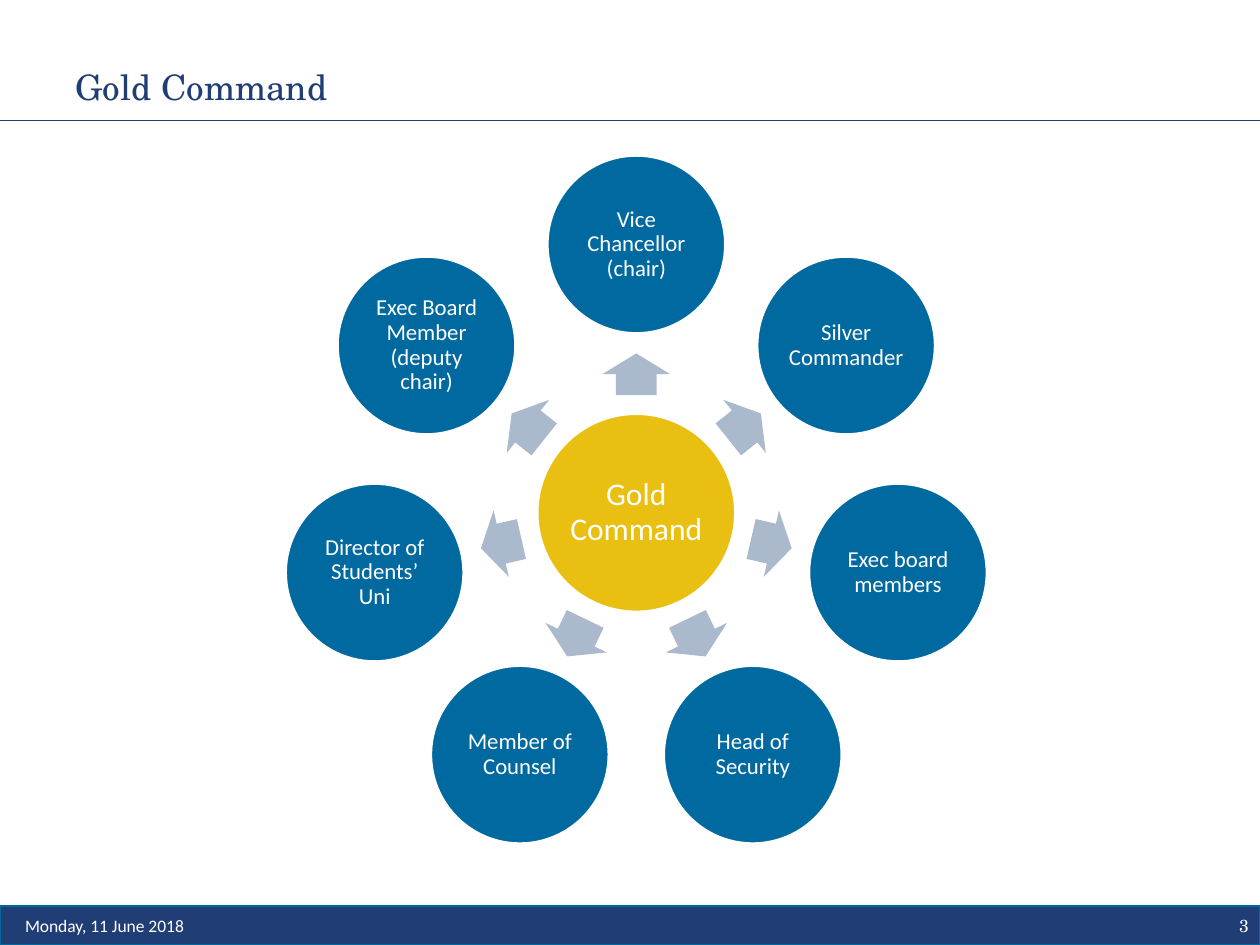
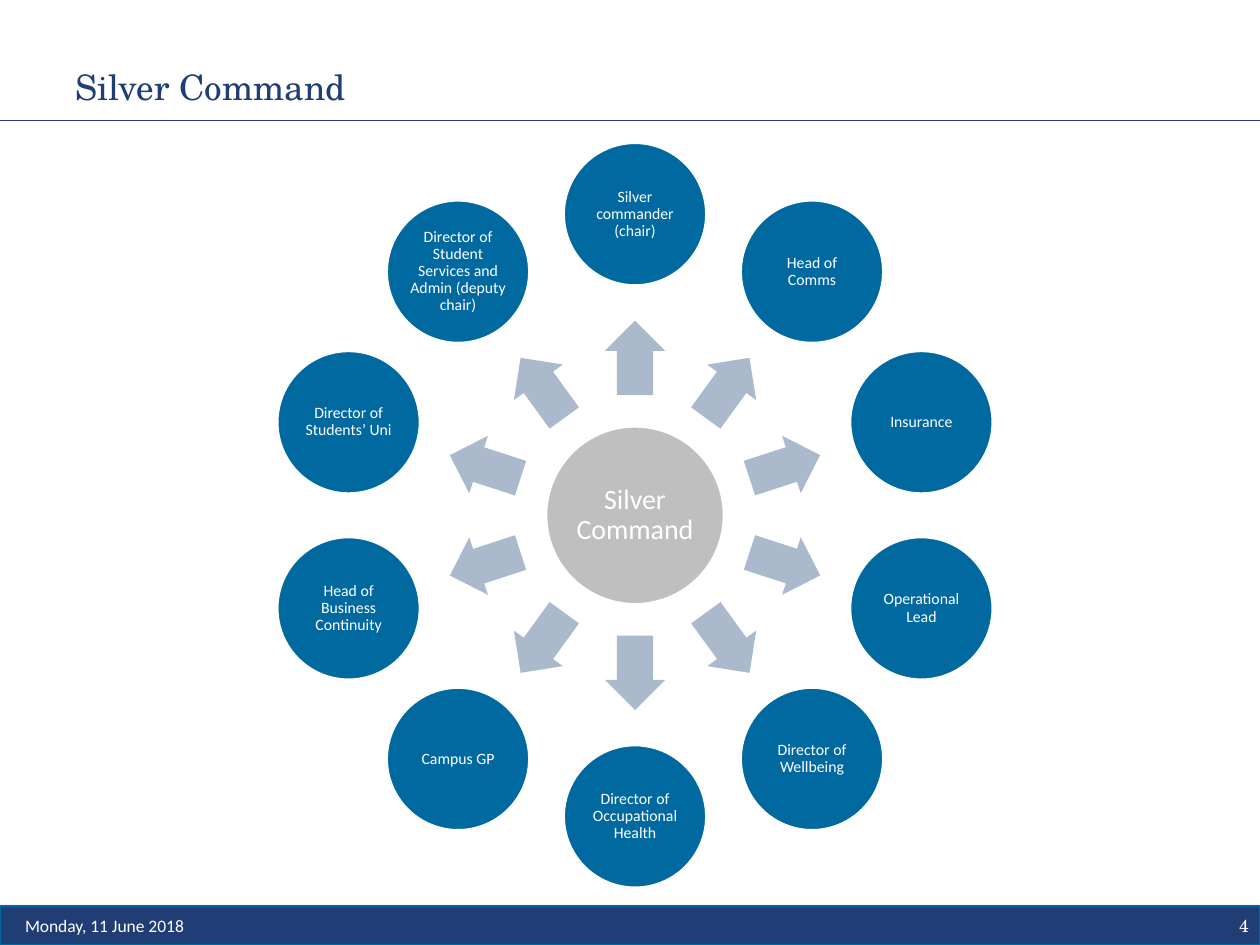
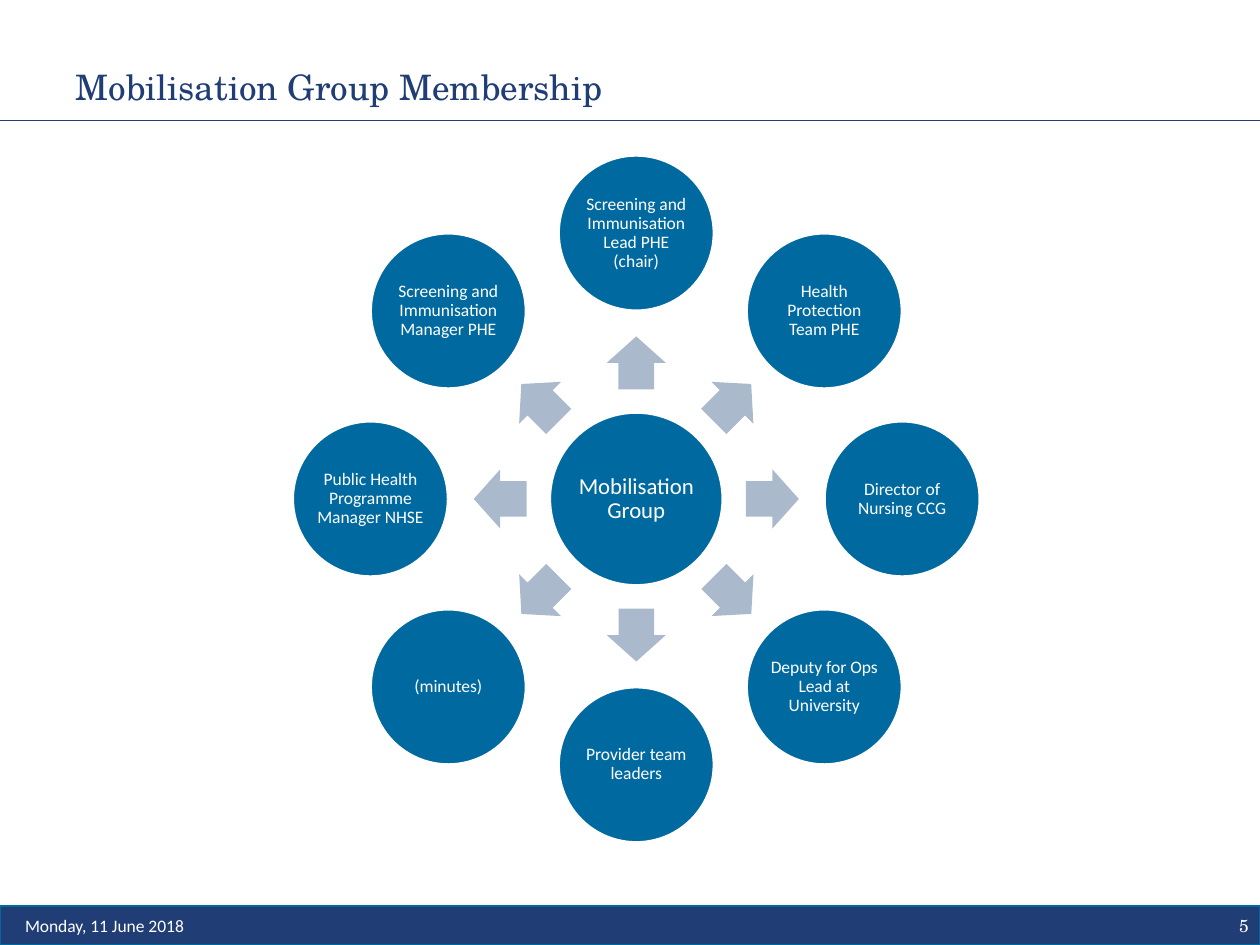
from dataclasses import dataclass
from math import cos, radians, sin

from lxml.etree import SubElement
from pptx import Presentation
from pptx.dml.color import RGBColor
from pptx.enum.shapes import MSO_CONNECTOR, MSO_SHAPE
from pptx.enum.text import MSO_ANCHOR, MSO_AUTO_SIZE, PP_ALIGN
from pptx.oxml.ns import qn
from pptx.util import Inches, Pt

COLORS = {
    "navy": "203D75",
    "band_edge": "00689C",
    "blue": "006AA0",
    "gold": "E9BF11",
    "silver": "BFBFBF",
    "arrow": "ABB9CD",
    "white": "FFFFFF",
    "black": "000000",
}
SERIF = "TeX Gyre Schola"
SANS = "Calibri"
DATE = "Monday, 11 June 2018"
FIRST_PAGE = 3
TITLE_BOX = (0.5, 0.46, 8.26, 0.45)
BAND_BOX = (0, 7.19, 10, 0.31)
RULE_TOP = 0.96


@dataclass
class Wheel:
    """Sizes and wording of a hub with members around it, in inches and points."""
    title: str
    box: tuple
    hub_text: str
    hub_color: str
    hub_size: float
    hub_font: int
    member_size: float
    member_font: int
    arrow_size: tuple
    arrow_radius: float
    members: list


WHEELS = [
    Wheel("Gold Command", (2.21, 1.23, 5.68), "Gold Command", "gold", 1.58, 18,
          1.42, 13, (0.33, 0.54), 1.1,
          ["Vice Chancellor (chair)", "Silver Commander", "Exec board members",
           "Head of Security", "Member of Counsel", "Director of Students’ Uni",
           "Exec Board Member (deputy chair)"]),
    Wheel("Silver Command", (2.08, 1.13, 5.92), "Silver Command", "silver", 1.42, 16,
          1.14, 9, (0.59, 0.48), 1.25,
          ["Silver commander (chair)", "Head of Comms", "Insurance",
           "Operational Lead", "Director of Wellbeing",
           "Director of Occupational Health", "Campus GP",
           "Head of Business Continuity", "Director of Students’ Uni",
           "Director of Student Services and Admin (deputy chair)"]),
    Wheel("Mobilisation Group Membership", (2.32, 1.23, 5.46), "Mobilisation Group",
          "blue", 1.38, 13, 1.24, 10, (0.42, 0.47), 1.08,
          ["Screening and Immunisation Lead PHE (chair)", "Health Protection Team PHE",
           "Director of Nursing CCG", "Deputy for Ops Lead at University",
           "Provider team leaders", "(minutes)", "Public Health Programme Manager NHSE",
           "Screening and Immunisation Manager PHE"]),
]


def color(name):
    """Return a palette colour."""
    return RGBColor.from_string(COLORS[name])


def place(shape, box):
    """Move and size a shape to a box in inches."""
    shape.left, shape.top, shape.width, shape.height = map(Inches, box)


def write(shape, text, font, size, color_name, alignment):
    """Put one formatted, vertically centred paragraph in a shape."""
    frame = shape.text_frame
    frame.text = text
    frame.word_wrap = True
    frame.auto_size = MSO_AUTO_SIZE.NONE
    frame.vertical_anchor = MSO_ANCHOR.MIDDLE
    paragraph = frame.paragraphs[0]
    paragraph.alignment = alignment
    paragraph.font.name = font
    paragraph.font.size = Pt(size)
    paragraph.font.color.rgb = color(color_name)
    return paragraph


def add_centered(shapes, kind, center, size, fill):
    """Add a flat filled shape around a centre point."""
    box = (center[0] - size[0] / 2, center[1] - size[1] / 2, *size)
    shape = shapes.add_shape(kind, *map(Inches, box))
    shape.shadow.inherit = False
    shape.fill.solid()
    shape.fill.fore_color.rgb = color(fill)
    return shape


def add_circle(shapes, center, diameter, fill, text, size):
    """Add a white-edged circle holding a centred label."""
    circle = add_centered(shapes, MSO_SHAPE.OVAL, center, (diameter, diameter), fill)
    circle.line.color.rgb = color("white")
    circle.line.width = Pt(2)
    write(circle, text, SANS, size, "white", PP_ALIGN.CENTER).line_spacing = 0.9
    frame = circle.text_frame
    frame.margin_left = frame.margin_right = Pt(size / 10)
    frame.margin_top = frame.margin_bottom = Pt(size / 10)


def add_arrow(shapes, center, size, rotation):
    """Add a block arrow that points away from the hub."""
    arrow = add_centered(shapes, MSO_SHAPE.RIGHT_ARROW, center, size, "arrow")
    arrow.line.fill.background()
    arrow.adjustments[0] = 0.6
    arrow.adjustments[1] = 0.5
    arrow.rotation = rotation % 360


def add_wheel(slide, wheel):
    """Fill the wheel's square box with a hub, arrows and a ring of members."""
    shapes = slide.shapes.add_group_shape().shapes
    left, top, side = wheel.box
    center = (left + side / 2, top + side / 2)
    ring_radius = (side - wheel.member_size) / 2

    def around(radius, angle):
        """Return the point at a radius and angle from the hub."""
        return (center[0] + radius * cos(radians(angle)),
                center[1] + radius * sin(radians(angle)))

    add_circle(shapes, center, wheel.hub_size, wheel.hub_color,
               wheel.hub_text, wheel.hub_font)
    for index, member in enumerate(wheel.members):
        angle = index * 360 / len(wheel.members) - 90
        add_arrow(shapes, around(wheel.arrow_radius, angle), wheel.arrow_size, angle)
        add_circle(shapes, around(ring_radius, angle), wheel.member_size, "blue",
                   member, wheel.member_font)


def add_band_shadow(band):
    """Give the footer band a soft shadow below it."""
    band.shadow.inherit = False
    effects = band.element.spPr.find(qn("a:effectLst"))
    shadow = SubElement(effects, qn("a:outerShdw"), blurRad="40000", dist="23000",
                        dir="5400000", rotWithShape="0")
    shade = SubElement(shadow, qn("a:srgbClr"), val=COLORS["black"])
    SubElement(shade, qn("a:alpha"), val="35000")


def dress_layout(layout, slide):
    """Draw the footer band and title rule, then move them to the layout."""
    place(layout.placeholders[0], TITLE_BOX)
    band = slide.shapes.add_shape(MSO_SHAPE.RECTANGLE, *map(Inches, BAND_BOX))
    band.fill.solid()
    band.fill.fore_color.rgb = color("navy")
    band.line.color.rgb = color("band_edge")
    band.line.width = Pt(0.75)
    add_band_shadow(band)
    rule = slide.shapes.add_connector(
        MSO_CONNECTOR.STRAIGHT, *map(Inches, (0, RULE_TOP, 10.04, RULE_TOP)))
    rule.line.color.rgb = color("navy")
    rule.line.width = Pt(0.5)
    SubElement(rule.element.spPr, qn("a:effectLst"))
    for shape in (band, rule):
        layout.shapes.element.append(shape.element)


def add_footer(slide, page):
    """Write the date and page number on the footer band."""
    left, top, width, height = BAND_BOX
    entries = [
        (DATE, left + 0.1, 2.22, SANS, PP_ALIGN.LEFT),
        (str(page), left + width - 2.32, 2.33, SERIF, PP_ALIGN.RIGHT),
    ]
    for text, entry_left, entry_width, font, alignment in entries:
        box = slide.shapes.add_textbox(
            *map(Inches, (entry_left, top, entry_width, height)))
        write(box, text, font, 10, "white", alignment)


def main():
    """Build the three command group slides."""
    presentation = Presentation()
    presentation.slide_width = Inches(10)
    presentation.slide_height = Inches(7.5)
    layout = presentation.slide_layouts[5]
    for index, wheel in enumerate(WHEELS):
        slide = presentation.slides.add_slide(layout)
        if index == 0:
            dress_layout(layout, slide)
        write(slide.shapes.title, wheel.title, SERIF, 20, "navy", PP_ALIGN.LEFT)
        add_wheel(slide, wheel)
        add_footer(slide, FIRST_PAGE + index)
    presentation.save("out.pptx")


if __name__ == "__main__":
    main()
